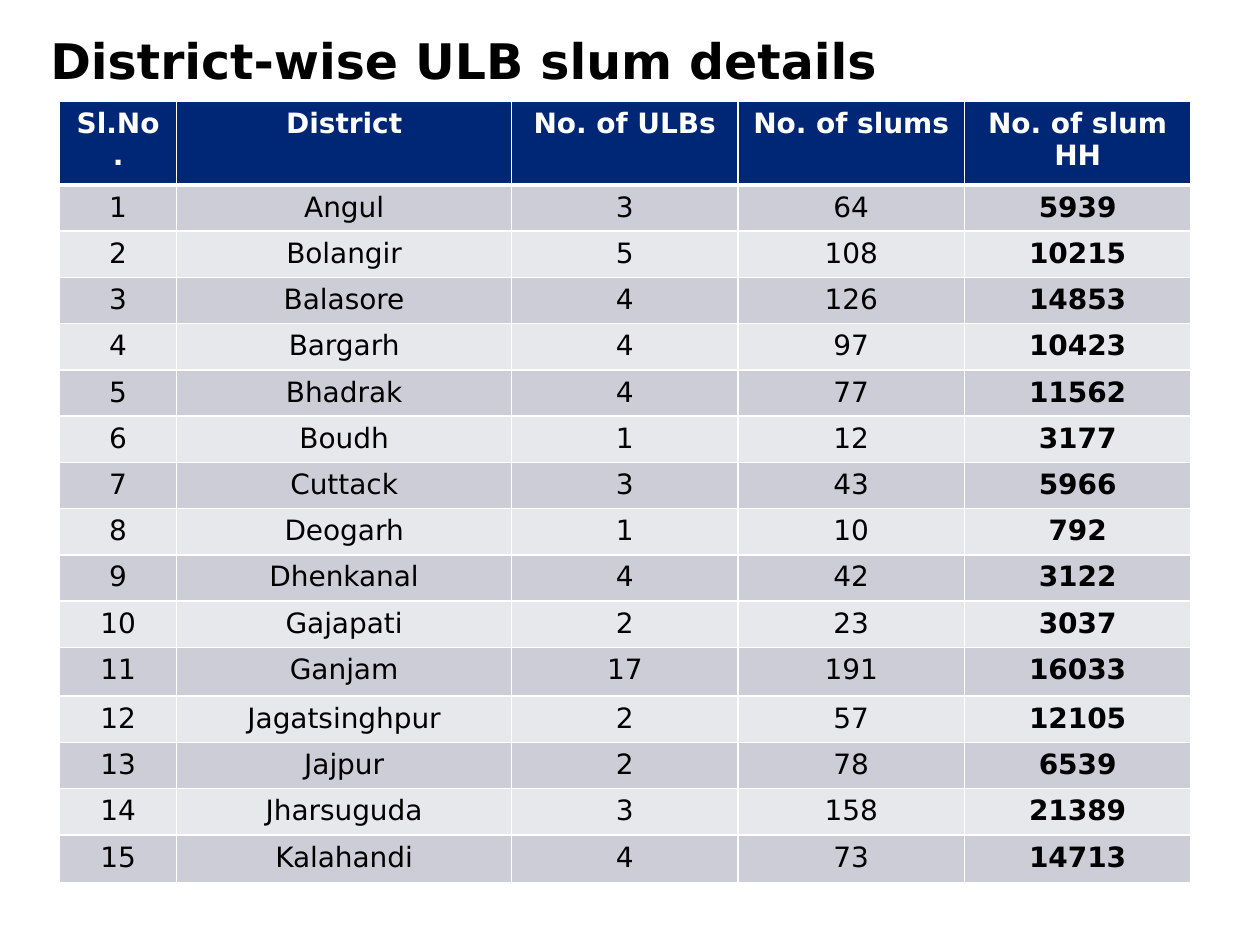
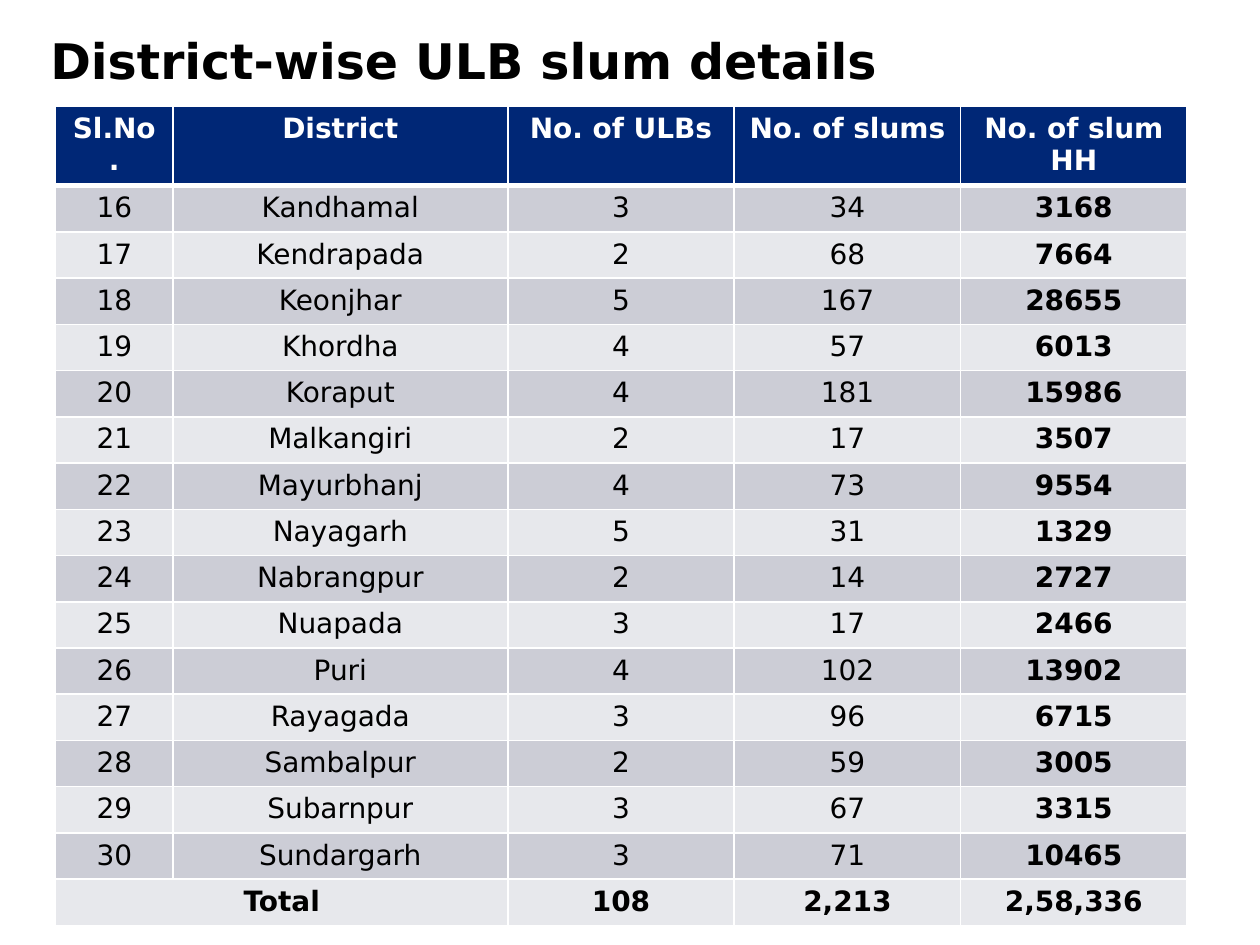
import lxml.etree
import pptx
import pptx.dml.color
import pptx.enum.text
import pptx.oxml.ns
import pptx.util

Pt = pptx.util.Pt
FONT = "DejaVu Sans"
BLACK, WHITE, NAVY = "000000", "FFFFFF", "002776"
BANDS = ["E7E8EC", "CCCDD6"]
TITLE = "District-wise ULB slum details"
HEADINGS = ["Sl.No.", "District", "No. of ULBs", "No. of slums", "No. of slum HH"]
COLUMN_WIDTHS = [67, 191.4, 129.4, 129.4, 129.4]
ROW_HEIGHT = 26.4

pages = [
    {
        "left": 34, "top": 58, "header_height": 47.7,
        "tall_rows": {11: 28, 15: 27.2}, "first_number": 1, "total": None,
        "districts": [
            ("Angul", 3, 64, 5939),
            ("Bolangir", 5, 108, 10215),
            ("Balasore", 4, 126, 14853),
            ("Bargarh", 4, 97, 10423),
            ("Bhadrak", 4, 77, 11562),
            ("Boudh", 1, 12, 3177),
            ("Cuttack", 3, 43, 5966),
            ("Deogarh", 1, 10, 792),
            ("Dhenkanal", 4, 42, 3122),
            ("Gajapati", 2, 23, 3037),
            ("Ganjam", 17, 191, 16033),
            ("Jagatsinghpur", 2, 57, 12105),
            ("Jajpur", 2, 78, 6539),
            ("Jharsuguda", 3, 158, 21389),
            ("Kalahandi", 4, 73, 14713),
        ],
    },
    {
        "left": 31.8, "top": 60.5, "header_height": 45,
        "tall_rows": {}, "first_number": 16,
        "total": ["Total", "", "108", "2,213", "2,58,336"],
        "districts": [
            ("Kandhamal", 3, 34, 3168),
            ("Kendrapada", 2, 68, 7664),
            ("Keonjhar", 5, 167, 28655),
            ("Khordha", 4, 57, 6013),
            ("Koraput", 4, 181, 15986),
            ("Malkangiri", 2, 17, 3507),
            ("Mayurbhanj", 4, 73, 9554),
            ("Nayagarh", 5, 31, 1329),
            ("Nabrangpur", 2, 14, 2727),
            ("Nuapada", 3, 17, 2466),
            ("Puri", 4, 102, 13902),
            ("Rayagada", 3, 96, 6715),
            ("Sambalpur", 2, 59, 3005),
            ("Subarnpur", 3, 67, 3315),
            ("Sundargarh", 3, 71, 10465),
        ],
    },
]


def set_color(color_format, value):
    color_format.rgb = pptx.dml.color.RGBColor.from_string(value)


def write_text(paragraph, text, size, color, bold):
    run = paragraph.add_run()
    run.text = text
    for name, value in {"name": FONT, "size": Pt(size), "bold": bold}.items():
        setattr(run.font, name, value)
    set_color(run.font.color, color)


presentation = pptx.Presentation()
presentation.slide_width = Pt(720)
presentation.slide_height = Pt(540)

for page in pages:
    slide = presentation.slides.add_slide(presentation.slide_layouts[6])
    title_frame = slide.shapes.add_textbox(Pt(28.8), Pt(23), Pt(660), Pt(36.7)).text_frame
    title_format = {"word_wrap": True, "margin_left": 0, "margin_top": 0,
                    "margin_right": 0, "margin_bottom": 0}
    for name, value in title_format.items():
        setattr(title_frame, name, value)
    title_frame.paragraphs[0].line_spacing = Pt(28)
    write_text(title_frame.paragraphs[0], TITLE, 28, BLACK, True)

    rows = [HEADINGS]
    for number, district in enumerate(page["districts"], page["first_number"]):
        rows.append([str(value) for value in (number, *district)])
    if page["total"]:
        rows.append(page["total"])
    heights = [page["tall_rows"].get(index, ROW_HEIGHT) for index in range(len(rows))]
    heights[0] = page["header_height"]

    table = slide.shapes.add_table(
        len(rows), len(HEADINGS), Pt(page["left"]), Pt(page["top"]),
        Pt(sum(COLUMN_WIDTHS)), Pt(sum(heights))).table
    table.horz_banding = False
    for column, width in zip(table.columns, COLUMN_WIDTHS):
        column.width = Pt(width)

    for row_index, values in enumerate(rows):
        table.rows[row_index].height = Pt(heights[row_index])
        is_header = row_index == 0
        is_total = values is page["total"]
        if is_total:
            table.cell(row_index, 0).merge(table.cell(row_index, 1))
        for column_index, text in enumerate(values):
            cell = table.cell(row_index, column_index)
            properties = cell._tc.get_or_add_tcPr()
            for side in ["lnL", "lnR", "lnT", "lnB"]:
                is_thick = (row_index, side) in [(0, "lnB"), (1, "lnT")]
                line = lxml.etree.SubElement(
                    properties, pptx.oxml.ns.qn(f"a:{side}"), w=str(Pt(3 if is_thick else 1)))
                line_fill = lxml.etree.SubElement(line, pptx.oxml.ns.qn("a:solidFill"))
                lxml.etree.SubElement(line_fill, pptx.oxml.ns.qn("a:srgbClr"), val=WHITE)
            cell.fill.solid()
            set_color(cell.fill.fore_color, NAVY if is_header else BANDS[row_index % 2])
            paragraph = cell.text_frame.paragraphs[0]
            paragraph.alignment = pptx.enum.text.PP_ALIGN.CENTER
            if text:
                is_bold = is_header or is_total or column_index == len(HEADINGS) - 1
                write_text(paragraph, text, 16, WHITE if is_header else BLACK, is_bold)

presentation.save("out.pptx")
